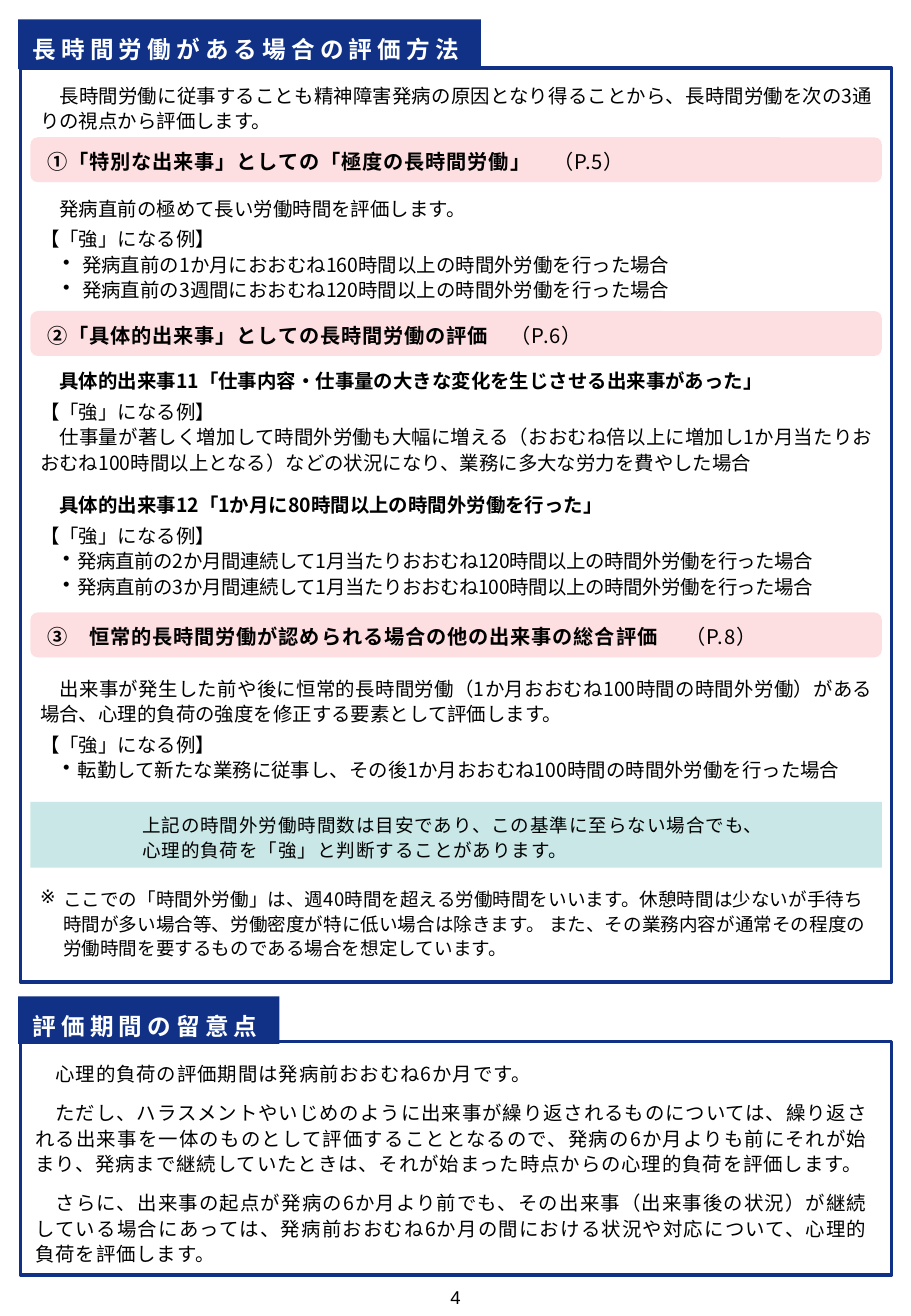
from dataclasses import dataclass

from lxml.etree import SubElement
from pptx import Presentation
from pptx.dml.color import RGBColor as RGB
from pptx.enum.shapes import MSO_SHAPE as Shape
from pptx.enum.text import MSO_ANCHOR as Anchor, MSO_AUTO_SIZE as AutoSize, PP_ALIGN as Align
from pptx.oxml.ns import qn
from pptx.util import Inches, Pt


@dataclass(frozen=True)
class Theme:
    navy: RGB = RGB.from_string("103185")
    pink: RGB = RGB.from_string("FEDFE1")
    mint: RGB = RGB.from_string("C9E7E7")
    white: RGB = RGB.from_string("FFFFFF")
    black: RGB = RGB.from_string("000000")
    font: str = "Noto Sans CJK JP"
    page_font: str = "Arial"
    tab_size: float = 14
    heading_size: float = 12
    body_size: float = 11.5
    note_size: float = 11
    frame_line: float = 2.25


THEME = Theme()


@dataclass(frozen=True)
class Box:
    left: float
    top: float
    width: float
    height: float

    def lengths(self):
        return [Inches(v) for v in (self.left, self.top, self.width, self.height)]


@dataclass(frozen=True)
class Line:
    text: str
    size: float = THEME.body_size
    bold: bool = False
    tracking: float = 0
    before: float = 0
    bullet: str = ""
    margin: float = 0
    indent: float = 0
    align: Align = Align.JUSTIFY
    spacing: float = 1.1
    color: RGB = THEME.black


@dataclass(frozen=True)
class Heading:
    top: float
    title: str
    page: str


@dataclass(frozen=True)
class Passage:
    box: Box
    lines: tuple


def item(text: str, tracking: float = 0) -> Line:
    return Line(text, tracking=tracking, bullet="•", margin=0.31, indent=-0.12)


def tab_line(text: str) -> Line:
    return Line(text, THEME.tab_size, True, 3, align=Align.LEFT, spacing=1.2, color=THEME.white)


def note_line(text: str) -> Line:
    return Line(text, THEME.note_size, tracking=0.5, margin=0.8, align=Align.LEFT)


def format_run(run, line: Line, bold: bool) -> None:
    run.font.size = Pt(line.size)
    run.font.bold = bold
    run.font.color.rgb = line.color
    run.font.name = THEME.font
    properties = run.font._element
    if line.tracking:
        properties.set("spc", str(round(line.tracking * 100)))
    SubElement(properties, qn("a:ea")).set("typeface", THEME.font)


def write_lines(frame, lines: tuple, anchor: Anchor = Anchor.TOP, bottom: float = 0.05) -> None:
    frame.word_wrap = True
    frame.auto_size = AutoSize.NONE
    frame.vertical_anchor = anchor
    frame.margin_left = frame.margin_right = Inches(0.12)
    frame.margin_top, frame.margin_bottom = Inches(0.08), Inches(bottom)
    frame.text = "\n".join(line.text for line in lines)
    for paragraph, line in zip(frame.paragraphs, lines):
        paragraph.alignment = line.align
        paragraph.line_spacing = line.spacing
        paragraph.space_before = Pt(line.before)
        properties = paragraph._p.get_or_add_pPr()
        properties.set("marL", str(Inches(line.margin)))
        properties.set("indent", str(Inches(line.indent)))
        if line.bullet:
            SubElement(properties, qn("a:buChar")).set("char", line.bullet)
        for run in paragraph.runs:
            format_run(run, line, line.bold)


def add_panel(slide, box: Box, fill: RGB, kind: Shape = Shape.RECTANGLE):
    panel = slide.shapes.add_shape(kind, *box.lengths())
    panel.shadow.inherit = False
    panel.fill.solid()
    panel.fill.fore_color.rgb = fill
    panel.line.fill.background()
    return panel


def add_frame(slide, box: Box) -> None:
    border = add_panel(slide, box, THEME.white)
    border.line.color.rgb = THEME.navy
    border.line.width = Pt(THEME.frame_line)


def add_heading(slide, heading: Heading) -> None:
    band = add_panel(slide, Box(0.25, heading.top, 7.01, 0.37), THEME.pink, Shape.ROUNDED_RECTANGLE)
    band.adjustments[0] = 0.167
    line = Line(heading.title, THEME.heading_size, True, 0.5, align=Align.LEFT, spacing=1.0)
    write_lines(band.text_frame, (line,), Anchor.MIDDLE)
    page = band.text_frame.paragraphs[0].add_run()
    page.text = heading.page
    format_run(page, line, False)


def add_passage(slide, passage: Passage) -> None:
    write_lines(slide.shapes.add_textbox(*passage.box.lengths()).text_frame, passage.lines)


def add_page_number(slide, number: str) -> None:
    frame = slide.shapes.add_textbox(*Box(2.79, 10.53, 1.92, 0.35).lengths()).text_frame
    frame.word_wrap = True
    frame.text = number
    paragraph = frame.paragraphs[0]
    paragraph.alignment = Align.CENTER
    font = paragraph.runs[0].font
    font.name, font.size, font.color.rgb = THEME.page_font, Pt(THEME.note_size), THEME.black


EXAMPLES = Line("【「強」になる例】", before=3)

HEADINGS = (
    Heading(1.13, "①「特別な出来事」としての「極度の長時間労働」　", "（P.5）"),
    Heading(2.56, "②「具体的出来事」としての長時間労働の評価　", "（P.6）"),
    Heading(5.04, "③　恒常的長時間労働が認められる場合の他の出来事の総合評価　 ", "（P.8）"),
)

PASSAGES = (
    Passage(Box(0.21, 0.59, 7.09, 0.56), (
        Line("　長時間労働に従事することも精神障害発病の原因となり得ることから、長時間労働を次の3通りの視点から評価します。"),
    )),
    Passage(Box(0.21, 1.52, 7.09, 1.03), (
        Line("　発病直前の極めて長い労働時間を評価します。"),
        EXAMPLES,
        item(" 発病直前の1か月におおむね160時間以上の時間外労働を行った場合"),
        item(" 発病直前の3週間におおむね120時間以上の時間外労働を行った場合"),
    )),
    Passage(Box(0.21, 2.94, 7.09, 1.03), (
        Line("　具体的出来事11「仕事内容・仕事量の大きな変化を生じさせる出来事があった」", bold=True),
        EXAMPLES,
        Line("　仕事量が著しく増加して時間外労働も大幅に増える（おおむね倍以上に増加し1か月当たりおおむね100時間以上となる）などの状況になり、業務に多大な労力を費やした場合"),
    )),
    Passage(Box(0.21, 3.96, 7.09, 1.03), (
        Line("　具体的出来事12「1か月に80時間以上の時間外労働を行った」", bold=True),
        EXAMPLES,
        item("発病直前の2か月間連続して1月当たりおおむね120時間以上の時間外労働を行った場合", -0.3),
        item("発病直前の3か月間連続して1月当たりおおむね100時間以上の時間外労働を行った場合", -0.3),
    )),
    Passage(Box(0.21, 5.47, 7.09, 1.03), (
        Line("　出来事が発生した前や後に恒常的長時間労働（1か月おおむね100時間の時間外労働）がある場合、心理的負荷の強度を修正する要素として評価します。"),
        EXAMPLES,
        item("転勤して新たな業務に従事し、その後1か月おおむね100時間の時間外労働を行った場合"),
    )),
    Passage(Box(0.21, 7.21, 7.09, 0.74), (
        Line("ここでの「時間外労働」は、週40時間を超える労働時間をいいます。休憩時間は少ないが手待ち時間が多い場合等、労働密度が特に低い場合は除きます。 また、その業務内容が通常その程度の労働時間を要するものである場合を想定しています。",
             THEME.note_size, bullet="※", margin=0.19, indent=-0.19, align=Align.LEFT),
    )),
    Passage(Box(0.17, 8.64, 7.09, 1.85), (
        Line("　心理的負荷の評価期間は発病前おおむね6か月です。", tracking=0.5),
        Line("　ただし、ハラスメントやいじめのように出来事が繰り返されるものについては、繰り返される出来事を一体のものとして評価することとなるので、発病の6か月よりも前にそれが始まり、発病まで継続していたときは、それが始まった時点からの心理的負荷を評価します。", tracking=0.5, before=8),
        Line("　さらに、出来事の起点が発病の6か月より前でも、その出来事（出来事後の状況）が継続している場合にあっては、発病前おおむね6か月の間における状況や対応について、心理的負荷を評価します。", tracking=0.5, before=8),
    )),
)


def main() -> None:
    deck = Presentation()
    deck.slide_width, deck.slide_height = Inches(7.5), Inches(10.83)
    slide = deck.slides.add_slide(deck.slide_layouts[5])

    title = slide.shapes.title
    title.left, title.top, title.width, title.height = Box(0.15, 0.16, 3.81, 0.41).lengths()
    title.fill.solid()
    title.fill.fore_color.rgb = THEME.navy
    write_lines(title.text_frame, (tab_line("長時間労働がある場合の評価方法"),), bottom=0.06)

    for box in (Box(0.17, 0.56, 7.17, 7.52), Box(0.17, 8.57, 7.17, 1.92)):
        add_frame(slide, box)
    for heading in HEADINGS:
        add_heading(slide, heading)
    for passage in PASSAGES:
        add_passage(slide, passage)

    period_tab = add_panel(slide, Box(0.15, 8.2, 2.15, 0.39), THEME.navy)
    write_lines(period_tab.text_frame, (tab_line("評価期間の留意点"),), bottom=0.04)
    guideline = add_panel(slide, Box(0.25, 6.6, 7.01, 0.54), THEME.mint)
    write_lines(guideline.text_frame, (
        note_line("上記の時間外労働時間数は目安であり、この基準に至らない場合でも、"),
        note_line("心理的負荷を「強」と判断することがあります。"),
    ), Anchor.MIDDLE)
    add_page_number(slide, "4")
    deck.save("out.pptx")


if __name__ == "__main__":
    main()
